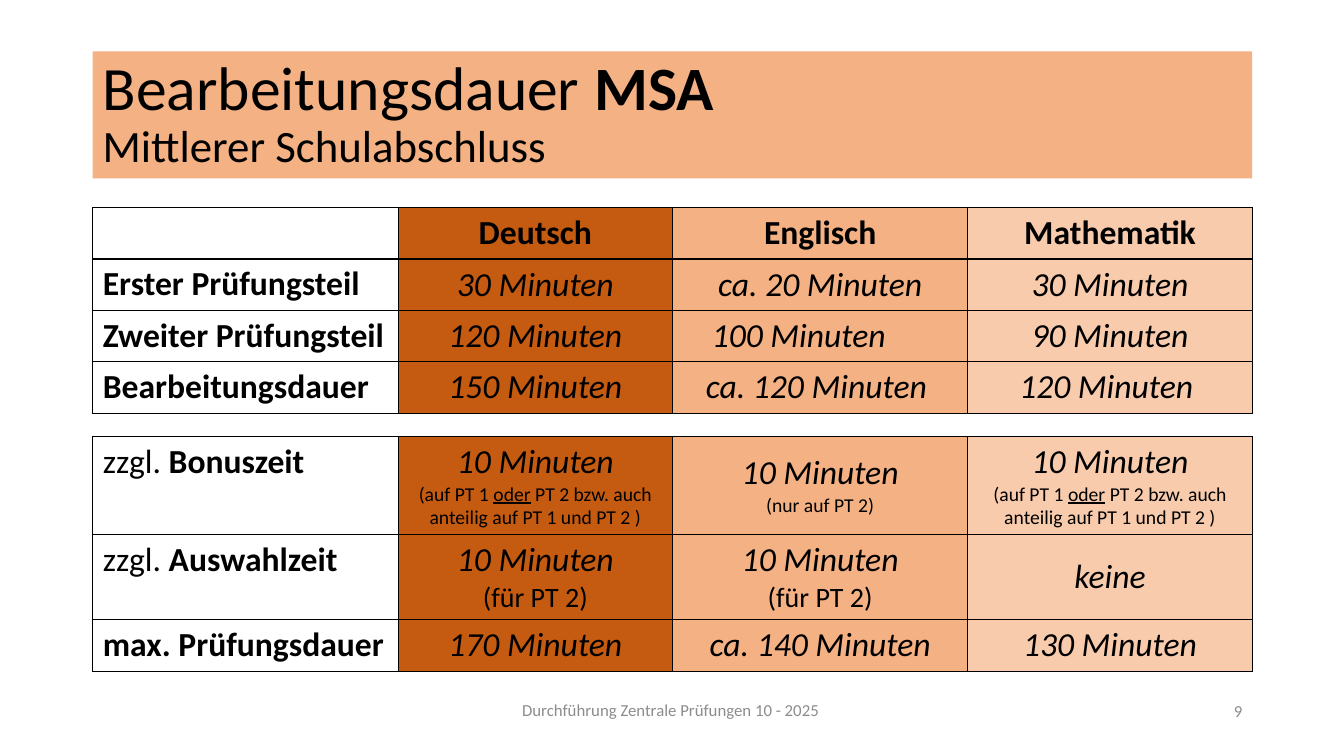
from dataclasses import dataclass
from typing import Any, NamedTuple

from lxml.etree import SubElement
from pptx import Presentation
from pptx.dml.color import RGBColor
from pptx.enum.text import MSO_ANCHOR, PP_ALIGN
from pptx.oxml.ns import qn
from pptx.util import Inches, Pt

COLORS = {
    "black": "000000",
    "gray": "8C8C8C",
    "dark": "C55A11",
    "mid": "F4B183",
    "light": "F8CBAD",
}
FONT = "Calibri"
FILLS = ("", "dark", "mid", "light")
WIDTHS = (3.03, 2.72, 2.93, 2.82)
LEFT, FULL = 0.92, 11.5


class Run(NamedTuple):
    text: str
    size: float = 24
    bold: bool = False
    italic: bool = False
    underline: bool = False
    color: str = "black"


Line = tuple[Run, ...]


@dataclass
class Cell:
    lines: tuple[Line, ...] = ()
    align: Any = PP_ALIGN.CENTER
    anchor: Any = MSO_ANCHOR.MIDDLE
    indent: float = 0


@dataclass
class Grid:
    top: float
    heights: tuple[float, ...]
    rows: list[list[Cell]]


@dataclass
class Box:
    left: float
    top: float
    width: float
    height: float
    lines: tuple[Line, ...]
    align: Any = PP_ALIGN.LEFT
    anchor: Any = MSO_ANCHOR.MIDDLE
    wrap: bool = True
    fill: str = ""
    spacing: float = 1.0


def rgb(name: str) -> RGBColor:
    return RGBColor.from_string(COLORS[name])


def set_run(run: Any, item: Run) -> None:
    run.text = item.text
    style = {
        "name": FONT,
        "size": Pt(item.size),
        "bold": item.bold,
        "italic": item.italic,
        "underline": item.underline,
    }
    for key, value in style.items():
        setattr(run.font, key, value)
    run.font.color.rgb = rgb(item.color)


def write(frame: Any, lines: tuple[Line, ...], align: Any) -> None:
    for index, line in enumerate(lines):
        para = frame.add_paragraph() if index else frame.paragraphs[0]
        para.alignment = align
        for item in line:
            set_run(para.add_run(), item)


def border(cell: Any) -> None:
    props = cell._tc.get_or_add_tcPr()
    for index, side in enumerate(("lnL", "lnR", "lnT", "lnB")):
        edge = props.makeelement(qn(f"a:{side}"), {"w": str(Pt(1))})
        fill = SubElement(edge, qn("a:solidFill"))
        SubElement(fill, qn("a:srgbClr"), val=COLORS["black"])
        props.insert(index, edge)


def add_grid(slide: Any, grid: Grid) -> None:
    frame = slide.shapes.add_table(
        len(grid.rows), len(WIDTHS), Inches(LEFT), Inches(grid.top),
        Inches(FULL), Inches(sum(grid.heights)))
    table = frame.table
    table.first_row = table.horz_banding = False
    for col, width in zip(table.columns, WIDTHS):
        col.width = Inches(width)
    for row, height, items in zip(table.rows, grid.heights, grid.rows):
        row.height = Inches(height)
        for cell, item, fill in zip(row.cells, items, FILLS):
            if fill:
                cell.fill.solid()
                cell.fill.fore_color.rgb = rgb(fill)
            else:
                cell.fill.background()
            border(cell)
            cell.vertical_anchor = item.anchor
            write(cell.text_frame, item.lines, item.align)
            if item.indent:
                props = cell.text_frame.paragraphs[0]._p.get_or_add_pPr()
                props.set("marL", str(Inches(item.indent)))


def add_box(slide: Any, box: Box) -> Any:
    shape = slide.shapes.add_textbox(
        *map(Inches, (box.left, box.top, box.width, box.height)))
    if box.fill:
        shape.fill.solid()
        shape.fill.fore_color.rgb = rgb(box.fill)
    frame = shape.text_frame
    frame.word_wrap = box.wrap
    frame.vertical_anchor = box.anchor
    write(frame, box.lines, box.align)
    for para in frame.paragraphs:
        para.line_spacing = box.spacing
    return shape


def head(text: str) -> Cell:
    return Cell(((Run(text, bold=True),),), anchor=MSO_ANCHOR.TOP)


def label(bold: str, plain: str = "") -> Cell:
    runs = (Run(plain),) if plain else ()
    return Cell(((*runs, Run(bold, bold=True)),), PP_ALIGN.LEFT, MSO_ANCHOR.TOP)


def time(text: str, *notes: Line) -> Cell:
    return Cell(((Run(text, italic=True),), *notes))


# Cell contents
either = (Run("(auf PT 1 ", 14), Run("oder", 14, underline=True),
          Run(" PT 2 bzw. auch anteilig auf PT 1 und PT 2 )", 14))
second = (Run("(für PT 2)", 20),)
shifted = Cell(time("100 Minuten").lines, PP_ALIGN.LEFT, indent=0.29)

GRIDS = [
    Grid(2.06, (0.51,) * 4, [
        [Cell(), head("Deutsch"), head("Englisch"), head("Mathematik")],
        [label("Erster Prüfungsteil"), time("30 Minuten"),
         time("ca. 20 Minuten"), time("30 Minuten")],
        [label("Zweiter Prüfungsteil"), time("120 Minuten"),
         shifted, time("90 Minuten")],
        [label("Bearbeitungsdauer"), time("150 Minuten"),
         time("ca. 120 Minuten "), time("120 Minuten ")],
    ]),
    Grid(4.33, (0.97, 0.85, 0.51), [
        [label("Bonuszeit", "zzgl. "), time("10 Minuten", either),
         time("10 Minuten", (Run("(nur auf PT 2)", 14),)),
         time("10 Minuten", either)],
        [label(" Auswahlzeit", "zzgl."), time("10 Minuten", second),
         time("10 Minuten", second), time("keine")],
        [label("max. Prüfungsdauer"), time("170 Minuten"),
         time("ca. 140 Minuten"), time("130 Minuten")],
    ]),
]

BOXES = [
    # Title band
    Box(LEFT, 0.51, FULL, 1.26,
        ((Run("Bearbeitungsdauer ", 44), Run("MSA", 44, bold=True)),
         (Run("Mittlerer Schulabschluss", 32),)),
        fill="mid", spacing=0.9),
    # Footer and slide number
    Box(5.08, 6.89, 3.17, 0.3,
        ((Run("Durchführung Zentrale Prüfungen 10 - 2025", 12, color="gray"),),),
        anchor=MSO_ANCHOR.TOP, wrap=False),
    Box(9.42, 6.85, 3, 0.4, ((Run("9", 12, color="gray"),),), PP_ALIGN.RIGHT),
]


def main() -> None:
    deck = Presentation()
    deck.slide_width, deck.slide_height = Inches(13.33), Inches(7.5)
    slide = deck.slides.add_slide(deck.slide_layouts[6])
    for box in BOXES:
        add_box(slide, box)
    for grid in GRIDS:
        add_grid(slide, grid)
    deck.save("out.pptx")


if __name__ == "__main__":
    main()
